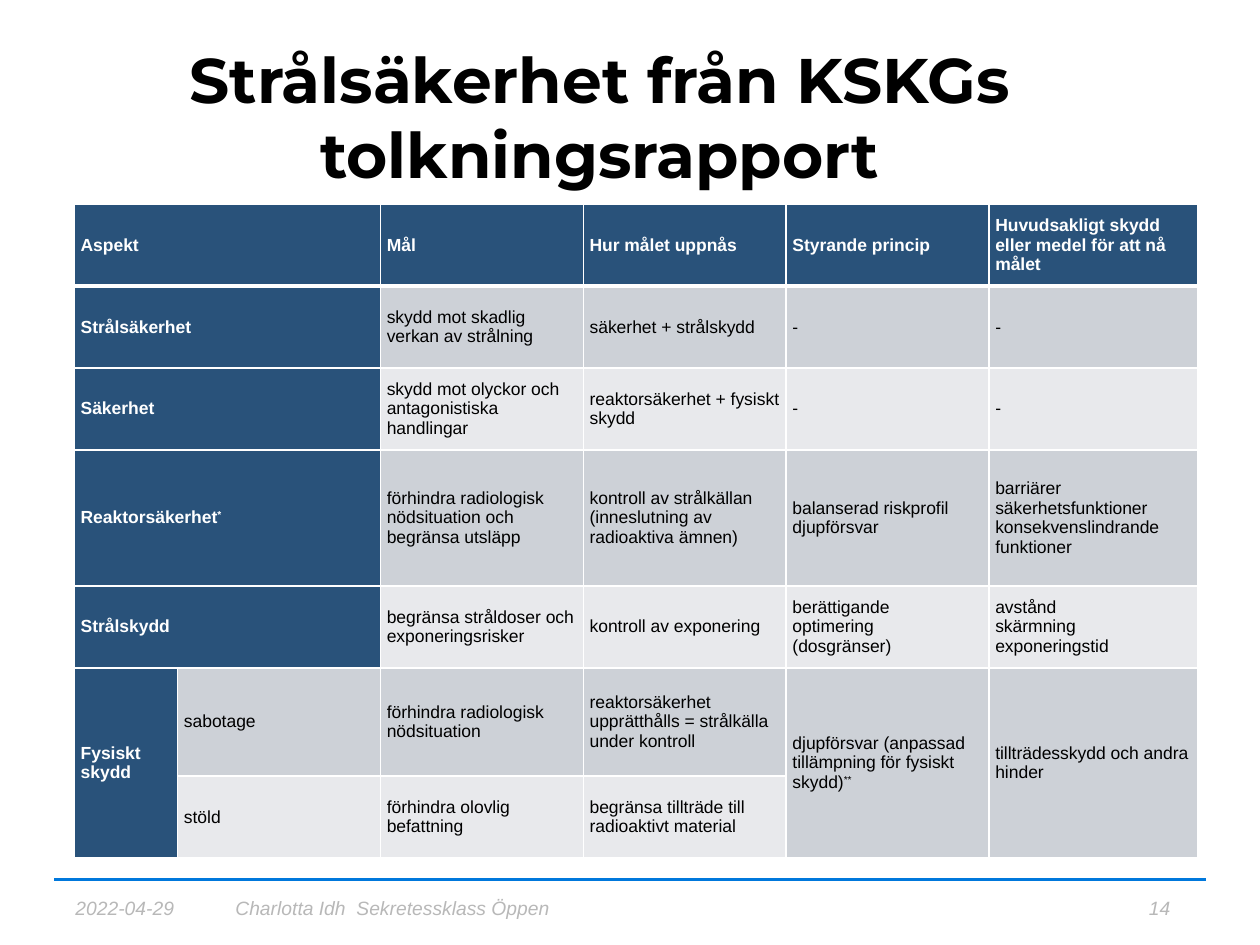
from pptx import Presentation
from pptx import util as u
from pptx.dml.color import RGBColor
from pptx.enum import shapes, text
from pptx.oxml import ns, xmlchemy

WHITE = RGBColor(0xFF, 0xFF, 0xFF)
BLACK = RGBColor(0, 0, 0)
NAVY = RGBColor(0x29, 0x52, 0x7A)
DARK = RGBColor(0xCD, 0xD1, 0xD7)
LIGHT = RGBColor(0xE8, 0xE9, 0xEC)
BLUE = RGBColor(0x00, 0x78, 0xDC)
GRAY = RGBColor(0xB8, 0xB8, 0xB8)

COLS = [8.2, 16.1, 16.1, 16.1, 16.1, 16.6]
ROWS = [6.5, 6.5, 6.5, 10.8, 6.5, 8.6, 6.5]
SPANS = [(r, 0, r, 1) for r in range(5)] + [(5, c, 6, c) for c in (0, 4, 5)]
CELLS = [
    ["Aspekt", "", "Mål", "Hur målet uppnås", "Styrande princip",
     "Huvudsakligt skydd eller medel för att nå målet"],
    ["Strålsäkerhet", "", "skydd mot skadlig verkan av strålning",
     "säkerhet + strålskydd", "-", "-"],
    ["Säkerhet", "", "skydd mot olyckor och antagonistiska handlingar",
     "reaktorsäkerhet + fysiskt skydd", "-", "-"],
    ["Reaktorsäkerhet^*", "",
     "förhindra radiologisk nödsituation och begränsa utsläpp",
     "kontroll av strålkällan (inneslutning av radioaktiva ämnen)",
     "balanserad riskprofil\ndjupförsvar",
     "barriärer\nsäkerhetsfunktioner\nkonsekvenslindrande funktioner"],
    ["Strålskydd", "", "begränsa stråldoser och exponeringsrisker",
     "kontroll av exponering", "berättigande\noptimering\n(dosgränser)",
     "avstånd\nskärmning\nexponeringstid"],
    ["Fysiskt skydd", "sabotage", "förhindra radiologisk nödsituation",
     "reaktorsäkerhet upprätthålls = strålkälla under kontroll",
     "djupförsvar (anpassad tillämpning för fysiskt skydd)^**",
     "tillträdesskydd och andra hinder"],
    ["", "stöld", "förhindra olovlig befattning",
     "begränsa tillträde till radioaktivt material", "", ""],
]


class Deck:
    font = "Arial"
    unit = u.Inches(0.1)

    def __init__(self):
        self.prs = Presentation()
        self.prs.slide_width = self.size(100)
        self.prs.slide_height = self.size(75)
        self.slide = self.prs.slides.add_slide(self.prs.slide_layouts[6])

    def size(self, count):
        return u.Emu(round(count * self.unit))

    def area(self, *counts):
        return [self.size(count) for count in counts]

    def run(self, para, words, size, color, bold=False, slant=False, face=None):
        run = para.add_run()
        run.text = words
        font = run.font
        font.name = face or self.font
        font.size = u.Pt(size)
        font.bold = bold
        font.italic = slant
        font.color.rgb = color
        return run

    def label(self, box, words, size, color, align=text.PP_ALIGN.LEFT,
              anchor=text.MSO_ANCHOR.MIDDLE, **style):
        frame = self.slide.shapes.add_textbox(*self.area(*box)).text_frame
        frame.word_wrap = True
        frame.vertical_anchor = anchor
        para = frame.paragraphs[0]
        para.alignment = align
        self.run(para, words, size, color, **style)

    def rule(self, left, right, top):
        line = self.slide.shapes.add_connector(
            shapes.MSO_CONNECTOR.STRAIGHT, *self.area(left, top, right, top))
        line.line.color.rgb = BLUE
        line.line.width = u.Pt(1.5)
        line._element.spPr.append(xmlchemy.OxmlElement("a:effectLst"))

    def edge(self, cell, side, width):
        line = xmlchemy.OxmlElement(f"a:ln{side}")
        line.set("w", str(u.Pt(width)))
        fill = xmlchemy.OxmlElement("a:solidFill")
        tint = xmlchemy.OxmlElement("a:srgbClr")
        tint.set("val", str(WHITE))
        fill.append(tint)
        line.append(fill)
        cell._tc.get_or_add_tcPr().append(line)

    def cell(self, cell, words, fill, color, bold, top, base):
        for side, width in zip("LRTB", (1, 1, top, base)):
            self.edge(cell, side, width)
        cell.fill.solid()
        cell.fill.fore_color.rgb = fill
        cell.vertical_anchor = text.MSO_ANCHOR.MIDDLE
        cell.margin_left = cell.margin_right = self.size(0.5)
        cell.margin_top = cell.margin_bottom = 0
        if not words:
            return
        para = cell.text_frame.paragraphs[0]
        para.space_before = para.space_after = u.Pt(3)
        body, _, mark = words.partition("^")
        for i, part in enumerate(body.split("\n")):
            if i:
                para.add_line_break()
            self.run(para, part, 10, color, bold)
        if mark:
            note = self.run(para, mark, 10, color, bold)
            note.font._element.set("baseline", "30000")

    def table(self, left, top):
        grid = self.slide.shapes.add_table(
            len(ROWS), len(COLS), *self.area(left, top, sum(COLS), sum(ROWS))).table
        for col, width in zip(grid.columns, COLS):
            col.width = self.size(width)
        for row, height in zip(grid.rows, ROWS):
            row.height = self.size(height)
        for r, line in enumerate(CELLS):
            for c, words in enumerate(line):
                head = r == 0 or c == 0
                fill = NAVY if head else DARK if r % 2 else LIGHT
                self.cell(grid.cell(r, c), words, fill, WHITE if head else BLACK,
                          head, 3 if r == 1 else 1, 3 if r == 0 else 1)
        for r, c, low, far in SPANS:
            grid.cell(r, c).merge(grid.cell(low, far))


def main():
    deck = Deck()
    deck.rule(4.3, 95.7, 69.8)
    deck.table(5.9, 16.2)
    for left, width, words in [(5, 11.9, "2022-04-29"),
                               (17.7, 71.7, "Charlotta Idh  Sekretessklass Öppen"),
                               (90.2, 4.8, "14")]:
        deck.label((left, 70.6, width, 2.9), words, 11, GRAY, slant=True)
    deck.label((2.6, 2.7, 90, 8.7), "Strålsäkerhet från KSKGs tolkningsrapport",
               36, BLACK, text.PP_ALIGN.CENTER, text.MSO_ANCHOR.TOP,
               bold=True, face="Montserrat")
    deck.prs.save("out.pptx")


if __name__ == "__main__":
    main()
